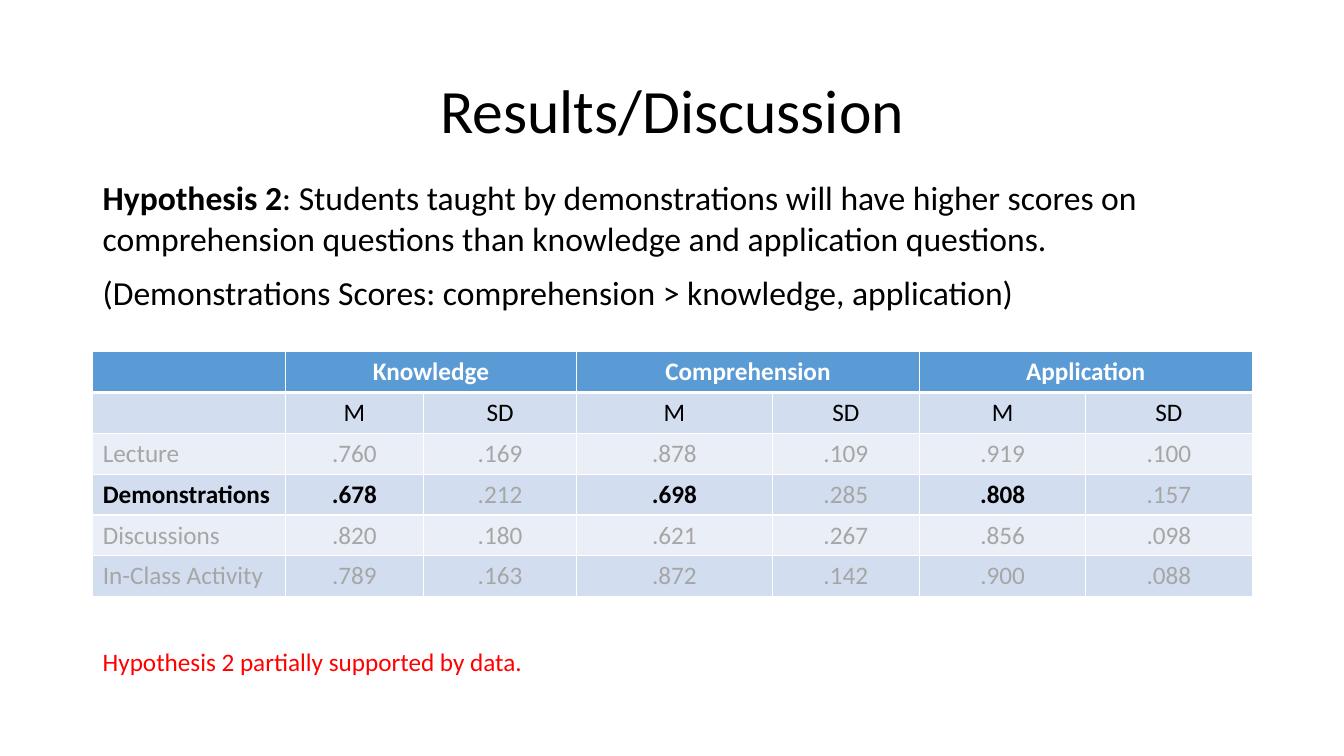
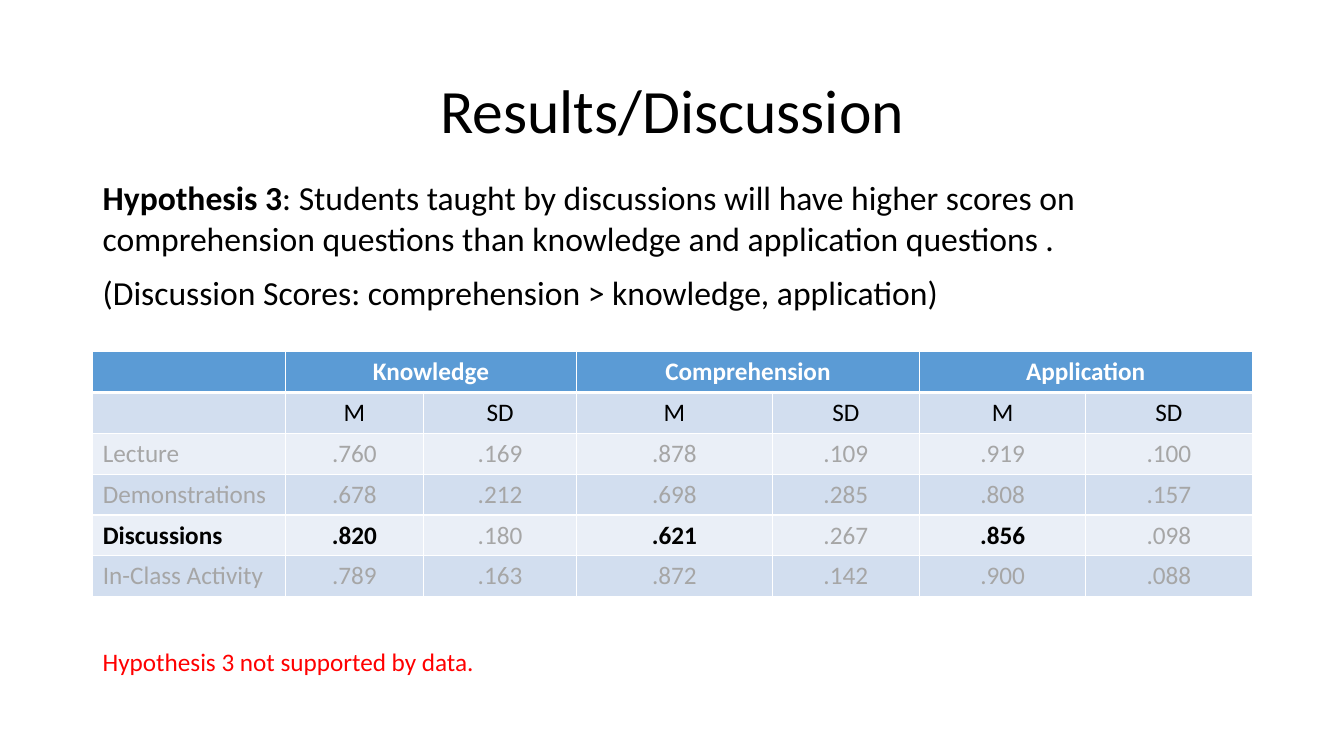
from lxml.etree import SubElement
from pptx import Presentation
from pptx.dml.color import RGBColor
from pptx.enum.text import MSO_ANCHOR, MSO_AUTO_SIZE, PP_ALIGN
from pptx.oxml.ns import qn
from pptx.util import Inches, Pt

FONT = "Calibri"
BLACK = RGBColor(0x00, 0x00, 0x00)
WHITE = RGBColor(0xFF, 0xFF, 0xFF)
GREY = RGBColor(0xA6, 0xA6, 0xA6)
RED = RGBColor(0xFF, 0x00, 0x00)
BLUE = RGBColor(0x5B, 0x9B, 0xD5)
BANDS = (RGBColor(0xEA, 0xEF, 0xF7), RGBColor(0xD2, 0xDE, 0xEF))

LEFT = 0.92
WIDTH = 11.5
COLS = (1.91, 1.37, 1.52, 1.94, 1.46, 1.65, 1.65)
HEADS = ("Knowledge", "Comprehension", "Application")
SCORES = (
    ("Lecture", ".760", ".169", ".878", ".109", ".919", ".100"),
    ("Demonstrations", ".678", ".212", ".698", ".285", ".808", ".157"),
    ("Discussions", ".820", ".180", ".621", ".267", ".856", ".098"),
    ("In-Class Activity", ".789", ".163", ".872", ".142", ".900", ".088"),
)


def write(para, text, size=18, color=BLACK, bold=False, align=PP_ALIGN.LEFT):
    para.alignment = align
    run = para.add_run()
    run.text = text
    font = run.font
    font.name = FONT
    font.size = Pt(size)
    font.bold = bold
    font.color.rgb = color


def add_title(slide, text):
    title = slide.shapes.title
    title.left, title.top = Inches(LEFT), Inches(0.4)
    title.width, title.height = Inches(WIDTH), Inches(1.45)
    frame = title.text_frame
    frame.vertical_anchor = MSO_ANCHOR.MIDDLE
    para = frame.paragraphs[0]
    para.line_spacing = 0.9
    write(para, text, size=44, align=PP_ALIGN.CENTER)


def add_box(slide, top, width, height, wrap=True):
    box = slide.shapes.add_textbox(
        Inches(LEFT), Inches(top), Inches(width), Inches(height))
    frame = box.text_frame
    frame.word_wrap = wrap
    frame.auto_size = MSO_AUTO_SIZE.SHAPE_TO_FIT_TEXT
    return frame


def add_claim(slide, label, claim, scores):
    frame = add_box(slide, 1.71, 10.48, 1.45)
    first, second = frame.paragraphs[0], frame.add_paragraph()
    first.space_before = second.space_before = Pt(10)
    write(first, label, size=24, bold=True)
    write(first, ": " + claim, size=24)
    write(second, scores, size=24)


def add_note(slide, text, width):
    frame = add_box(slide, 6.36, width, 0.4, wrap=False)
    write(frame.paragraphs[0], text, color=RED)


def style(cell, fill, above=1, below=1):
    props = cell._tc.get_or_add_tcPr()
    for side, width in zip("LRTB", (1, 1, above, below)):
        line = SubElement(props, qn("a:ln" + side), w=str(Pt(width)))
        solid = SubElement(line, qn("a:solidFill"))
        SubElement(solid, qn("a:srgbClr"), val=str(WHITE))
    cell.fill.solid()
    cell.fill.fore_color.rgb = fill


def add_scores(slide, focus):
    rows = [("",) + ("M", "SD") * len(HEADS), *SCORES]
    table = slide.shapes.add_table(
        len(rows) + 1, len(COLS),
        Inches(LEFT), Inches(3.49), Inches(WIDTH), Inches(2.43)).table
    for col, width in zip(table.columns, COLS):
        col.width = Inches(width)

    for c in range(len(COLS)):
        style(table.cell(0, c), BLUE, below=3)
    for i, head in enumerate(HEADS):
        cell = table.cell(0, 2 * i + 1)
        cell.merge(table.cell(0, 2 * i + 2))
        write(cell.text_frame.paragraphs[0], head,
              color=WHITE, bold=True, align=PP_ALIGN.CENTER)

    for r, row in enumerate(rows, 1):
        for c, text in enumerate(row):
            cell = table.cell(r, c)
            style(cell, BANDS[r % 2], above=3 if r == 1 else 1)
            if not text:
                continue
            mean = c == 0 or c % 2 == 1
            bold = row[0] == focus and mean
            write(cell.text_frame.paragraphs[0], text, bold=bold,
                  color=BLACK if bold or r == 1 else GREY,
                  align=PP_ALIGN.CENTER if c else PP_ALIGN.LEFT)


def add_page(deck, label, claim, scores, focus, note, width):
    slide = deck.slides.add_slide(deck.slide_layouts[5])
    add_title(slide, "Results/Discussion")
    add_claim(slide, label, claim, scores)
    add_scores(slide, focus)
    add_note(slide, f"{label} {note}", width)


def main():
    deck = Presentation()
    deck.slide_width, deck.slide_height = Inches(13.33), Inches(7.5)
    add_page(
        deck, "Hypothesis 2",
        "Students taught by demonstrations will have higher scores on "
        "comprehension questions than knowledge and application questions.",
        "(Demonstrations Scores: comprehension > knowledge, application)",
        "Demonstrations", "partially supported by data.", 4.41)
    add_page(
        deck, "Hypothesis 3",
        "Students taught by discussions will have higher scores on "
        "comprehension questions than knowledge and application questions .",
        "(Discussion Scores: comprehension > knowledge, application)",
        "Discussions", "not supported by data.", 3.93)
    deck.save("out.pptx")


if __name__ == "__main__":
    main()
